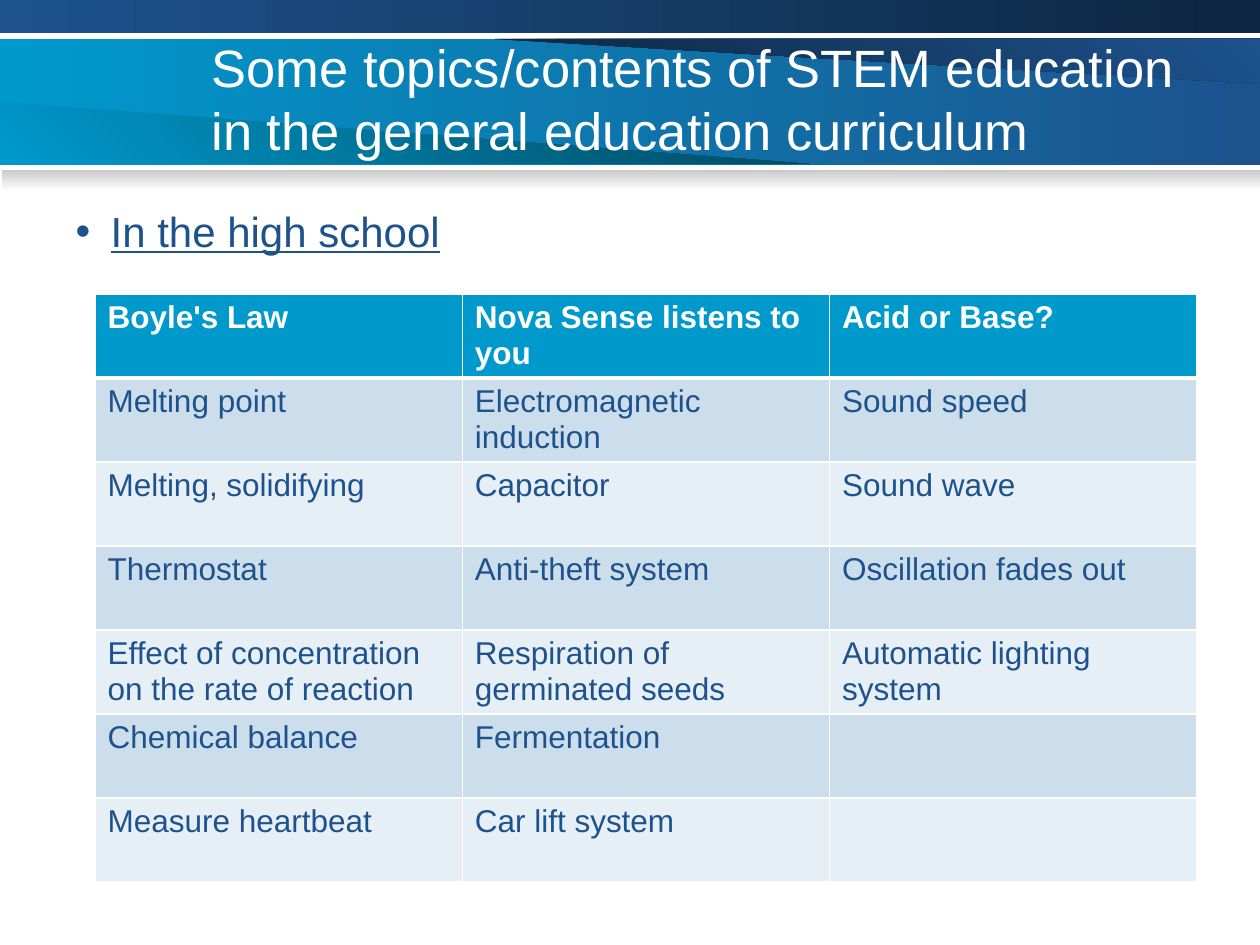
import pptx
import pptx.util
import pptx.dml.color
import pptx.enum.shapes
import pptx.enum.text
import pptx.oxml.ns
import lxml.etree

HUES = {
    "white": "FFFFFF", "cyan": "0099CC", "blue": "1D528D", "navy": "0D2641",
    "teal": "00475E", "gray": "CACACA", "odd": "CCDEEC", "even": "E7EFF6",
}
UNIT = 914400 / 126
ROWS = [
    ["Boyle's Law", "Nova Sense listens to you", "Acid or Base?"],
    ["Melting point", "Electromagnetic induction", "Sound speed"],
    ["Melting, solidifying", "Capacitor", "Sound wave"],
    ["Thermostat", "Anti-theft system", "Oscillation fades out"],
    ["Effect of concentration on the rate of reaction",
     "Respiration of germinated seeds", "Automatic lighting system"],
    ["Chemical balance", "Fermentation", ""],
    ["Measure heartbeat", "Car lift system", ""],
]


def px(num):
    return pptx.util.Emu(round(num * UNIT))


def hue(name):
    return pptx.dml.color.RGBColor.from_string(HUES[name])


def node(parent, tag, **attrs):
    return lxml.etree.SubElement(parent, pptx.oxml.ns.qn(tag), attrs)


class Deck:
    font = "Arial"

    def __init__(self):
        self.file = pptx.Presentation()
        self.file.slide_width, self.file.slide_height = px(1260), px(945)
        self.slide = self.file.slides.add_slide(self.file.slide_layouts[1])
        self.shapes = self.slide.shapes

    def shade(self, shape, start, end, angle):
        """Fill with a two-colour gradient, angle counted anticlockwise."""
        shape.shadow.inherit = False
        shape.line.fill.background()
        shape.fill.gradient()
        shape.fill.gradient_angle = angle
        for stop, name in zip(shape.fill.gradient_stops, (start, end)):
            stop.color.rgb = hue(name)

    def band(self, box, start, end, angle=0):
        kind = pptx.enum.shapes.MSO_SHAPE.RECTANGLE
        self.shade(self.shapes.add_shape(kind, *map(px, box)), start, end, angle)

    def wedge(self, points, start, end):
        form = self.shapes.build_freeform(*points[0], scale=UNIT)
        form.add_line_segments(points[1:], close=True)
        self.shade(form.convert_to_shape(), start, end, 45)

    def style(self, para, size, color, bold=False, under=False):
        for run in para.runs:
            font = run.font
            font.name, font.size = self.font, pptx.util.Pt(size)
            font.bold, font.underline = bold, under
            font.color.rgb = hue(color)

    def holder(self, index, box, text):
        """Place a template placeholder in front and return its paragraph."""
        shape = self.slide.placeholders[index]
        self.shapes.element.append(shape.element)
        shape.left, shape.top, shape.width, shape.height = map(px, box)
        frame = shape.text_frame
        frame.text = text
        frame.word_wrap = True
        frame.auto_size = pptx.enum.text.MSO_AUTO_SIZE.NONE
        para = frame.paragraphs[0]
        para.alignment = pptx.enum.text.PP_ALIGN.LEFT
        return para

    def title(self, box, text):
        para = self.holder(0, box, text)
        self.style(para, 30, "white")

    def bullet(self, box, text):
        para = self.holder(1, box, text)
        para.space_before = pptx.util.Pt(0)
        props = para._p.get_or_add_pPr()
        props.set("marL", str(px(35)))
        props.set("indent", str(px(-35)))
        node(props, "a:buChar", char="•")
        self.style(para, 24, "blue", under=True)

    def edge(self, cell, base):
        props = cell._tc.get_or_add_tcPr()
        for side, width in zip("LRTB", (1, 1, 1, base)):
            line = node(props, "a:ln" + side, w=str(pptx.util.Pt(width)))
            fill = node(line, "a:solidFill")
            node(fill, "a:srgbClr", val=HUES["white"])

    def table(self, box, rows):
        grid = self.shapes.add_table(len(rows), len(rows[0]), *map(px, box)).table
        for i, row in enumerate(rows):
            head = i == 0
            back = "cyan" if head else "odd" if i % 2 else "even"
            for j, text in enumerate(row):
                cell = grid.cell(i, j)
                cell.text = text
                self.edge(cell, 3 if head else 1)
                cell.fill.solid()
                cell.fill.fore_color.rgb = hue(back)
                para = cell.text_frame.paragraphs[0]
                self.style(para, 18, "white" if head else "blue", bold=head)


def main():
    deck = Deck()
    deck.band((0, 39, 1260, 126), "cyan", "blue")
    deck.wedge([(1260, 39), (495, 39), (1260, 84)], "navy", "blue")
    deck.wedge([(0, 164), (810, 164), (0, 102)], "cyan", "teal")
    deck.band((0, 0, 1260, 33), "blue", "navy")
    deck.band((2, 170, 1258, 21), "gray", "white", 270)
    deck.title((199, 38, 998, 120),
               "Some topics/contents of STEM education in the general education curriculum")
    deck.bullet((63, 199, 1134, 682), "In the high school")
    deck.table((95, 294, 1102, 588), ROWS)
    deck.file.save("out.pptx")


if __name__ == "__main__":
    main()
